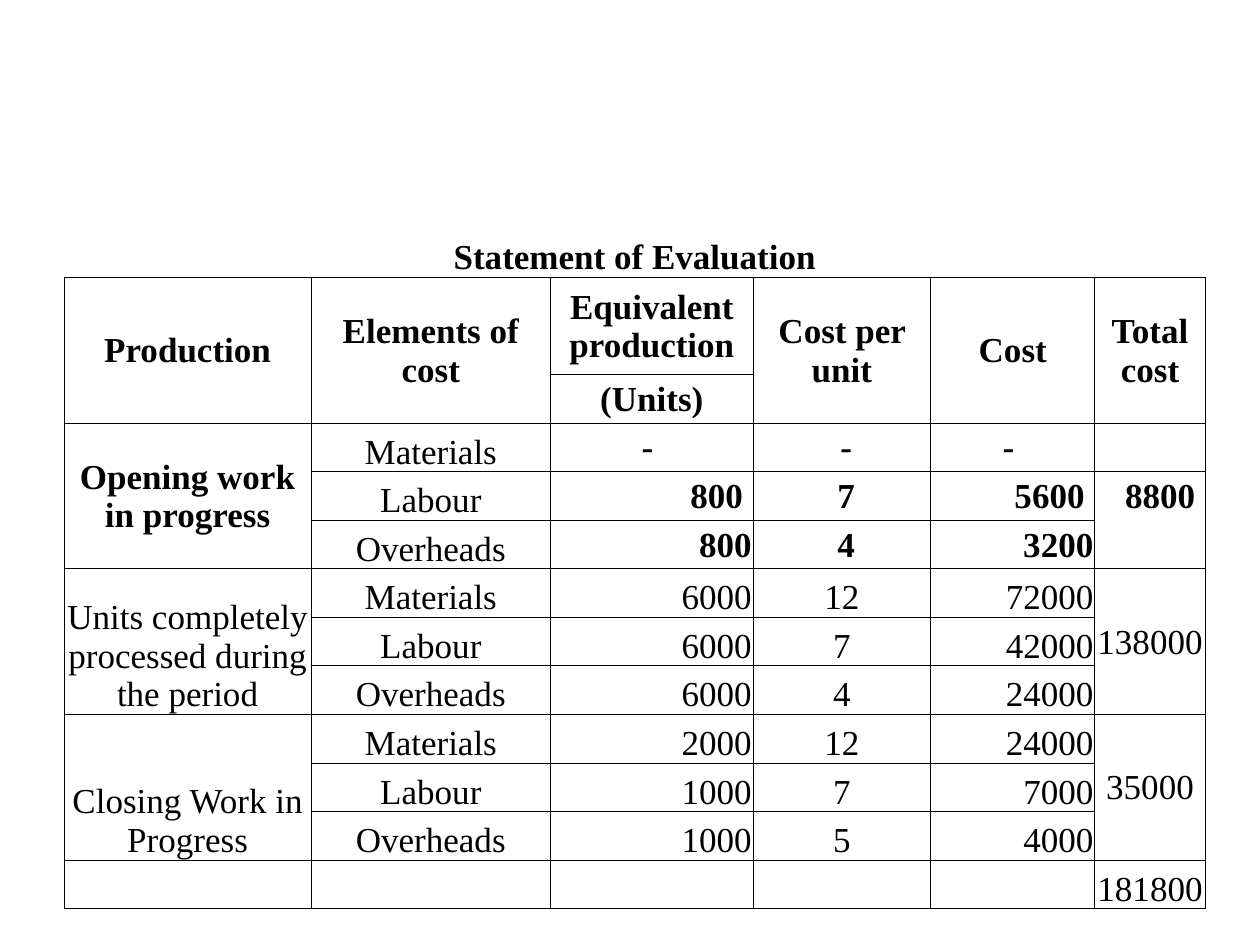
from dataclasses import dataclass

from lxml import etree
from pptx import Presentation
from pptx.dml.color import RGBColor
from pptx.enum.text import MSO_ANCHOR, PP_ALIGN
from pptx.oxml.ns import qn
from pptx.table import Table, _Cell
from pptx.util import Pt

CENTER, RIGHT = PP_ALIGN.CENTER, PP_ALIGN.RIGHT
MIDDLE, BOTTOM = MSO_ANCHOR.MIDDLE, MSO_ANCHOR.BOTTOM

INK = "000000"
FONT = "Times New Roman"
LINE_WIDTH = 0.5
PLAIN_STYLE = "{2D5ABB26-0587-4C30-8999-92F81FD0307C}"
LEFT, TOP = 36.7, 111.6
COLUMN_WIDTHS = [141, 137, 115.6, 101.6, 93.7, 63.2]
ROW_HEIGHTS = [46.8, 55.6] + [27.76] * 11
MARGINS = {"margin_left": Pt(0.8), "margin_right": Pt(0.8),
           "margin_top": Pt(0.8), "margin_bottom": Pt(0)}


@dataclass
class Block:
    """A bordered area of the table; its text sits in the first cell."""
    row: int
    column: int
    text: str = ""
    rows: int = 1
    columns: int = 1
    bold: bool = False
    align: PP_ALIGN = CENTER
    anchor: MSO_ANCHOR = BOTTOM
    merged: bool = True
    bordered: bool = True


@dataclass
class Group:
    """One kind of production with its three cost elements."""
    name: str
    values: list[tuple[str, str, str]]
    total: str
    opening: bool = False


ELEMENTS = ["Materials", "Labour", "Overheads"]
HEADINGS = ["Production", "Elements of cost", "Equivalent production",
            "Cost per unit", "Cost", "Total cost"]
GROUPS = [
    Group("Opening work in progress",
          [("- ", " -", "- "), ("800 ", " 7", "5600 "), (" 800", " 4", " 3200")],
          "8800 ", opening=True),
    Group("Units completely processed during the period",
          [("6000", "12", "72000"), ("6000", "7", "42000"), ("6000", "4", "24000")],
          "138000"),
    Group("Closing Work in Progress",
          [("2000", "12", "24000"), ("1000", "7", "7000"), ("1000", "5", "4000")],
          "35000"),
]


def color(value: str) -> RGBColor:
    return RGBColor.from_string(value)


def apply(target: object, formats: dict) -> None:
    for name, value in formats.items():
        setattr(target, name, value)


def add_borders(cell: _Cell, sides: str) -> None:
    """Draw the given sides, in the order L, R, T, B."""
    properties = cell._tc.get_or_add_tcPr()
    for index, side in enumerate(sides):
        line = etree.Element(qn(f"a:ln{side}"), w=str(Pt(LINE_WIDTH)))
        fill = etree.SubElement(line, qn("a:solidFill"))
        etree.SubElement(fill, qn("a:srgbClr"), val=INK)
        properties.insert(index, line)


def write_text(cell: _Cell, block: Block) -> None:
    cell.vertical_anchor = block.anchor
    para = cell.text_frame.paragraphs[0]
    para.alignment = block.align
    span = para.add_run()
    span.text = block.text
    apply(span.font, {"name": FONT, "size": Pt(20), "bold": block.bold})
    span.font.color.rgb = color(INK)


def draw_block(table: Table, block: Block) -> None:
    last_row = block.row + block.rows - 1
    last_column = block.column + block.columns - 1
    first = table.cell(block.row, block.column)
    if block.bordered:
        for row in range(block.row, last_row + 1):
            for column in range(block.column, last_column + 1):
                edges = {"L": column == block.column, "R": column == last_column,
                         "T": row == block.row, "B": row == last_row}
                sides = "".join(side for side, shown in edges.items() if shown)
                add_borders(table.cell(row, column), sides)
    if block.merged and (block.rows > 1 or block.columns > 1):
        first.merge(table.cell(last_row, last_column))
    if block.text:
        write_text(first, block)


def heading_blocks() -> list[Block]:
    blocks = [Block(0, 0, "Statement of Evaluation", columns=6, bold=True,
                    bordered=False)]
    for column, heading in enumerate(HEADINGS):
        blocks.append(Block(1, column, heading, rows=2, bold=True, anchor=MIDDLE,
                            merged=column != 2))
    blocks.append(Block(2, 2, "(Units)", bold=True, anchor=MIDDLE, bordered=False))
    return blocks


def group_blocks(group: Group, top: int) -> list[Block]:
    opening = group.opening
    anchor = MIDDLE if opening else BOTTOM
    blocks = [Block(top, 0, group.name, rows=3, bold=opening, anchor=anchor)]
    for row, (element, values) in enumerate(zip(ELEMENTS, group.values), top):
        blocks.append(Block(row, 1, element))
        for column, value in enumerate(values, 2):
            centered = column == 3 or "-" in value
            blocks.append(Block(row, column, value, bold=opening, anchor=anchor,
                                align=CENTER if centered else RIGHT))
    if opening:
        # The opening total stands in the middle of three open cells
        blocks.append(Block(top, 5, rows=3, merged=False))
        blocks.append(Block(top + 1, 5, group.total, bold=True, align=RIGHT,
                            anchor=MIDDLE, bordered=False))
    else:
        blocks.append(Block(top, 5, group.total, rows=3, anchor=MIDDLE))
    return blocks


def main() -> None:
    deck = Presentation()
    apply(deck, {"slide_width": Pt(720), "slide_height": Pt(540)})
    page = deck.slides.add_slide(deck.slide_layouts[6])

    # Empty grid without a banded style
    frame = page.shapes.add_table(
        len(ROW_HEIGHTS), len(COLUMN_WIDTHS), Pt(LEFT), Pt(TOP),
        Pt(sum(COLUMN_WIDTHS)), Pt(sum(ROW_HEIGHTS)))
    table = frame.table
    apply(table, {"first_row": False, "horz_banding": False})
    table._tbl.tblPr.find(qn("a:tableStyleId")).text = PLAIN_STYLE
    for column, width in zip(table.columns, COLUMN_WIDTHS):
        column.width = Pt(width)
    for row, height in zip(table.rows, ROW_HEIGHTS):
        row.height = Pt(height)
    for cell in table.iter_cells():
        apply(cell, MARGINS)
        cell.fill.background()

    # Title and headings, cost groups, grand total
    blocks = heading_blocks()
    for index, group in enumerate(GROUPS):
        blocks += group_blocks(group, 3 + 3 * index)
    blocks += [Block(12, column) for column in range(5)]
    blocks.append(Block(12, 5, "181800"))
    for block in blocks:
        draw_block(table, block)

    deck.save("out.pptx")


if __name__ == "__main__":
    main()
